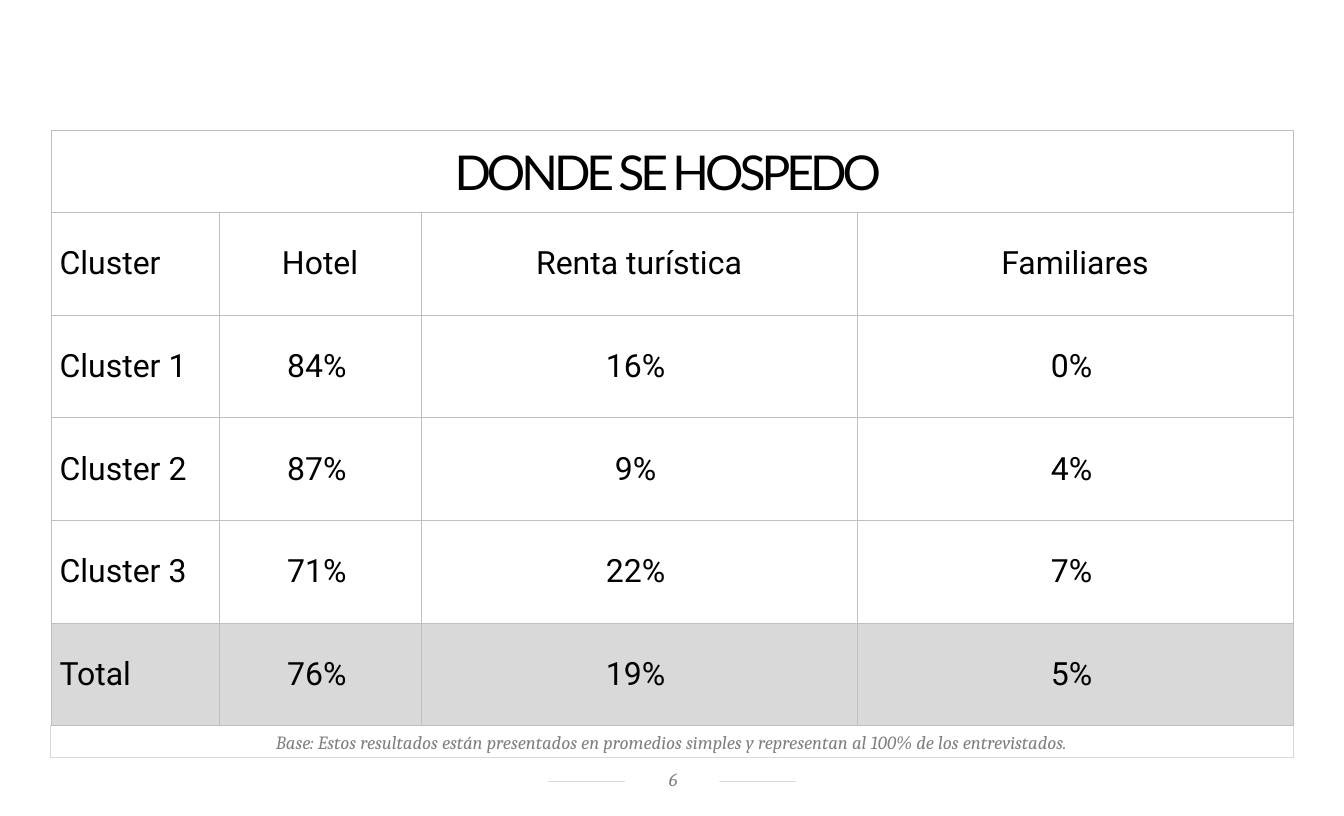
from pptx import Presentation
from pptx.dml.color import RGBColor
from pptx.enum.shapes import MSO_CONNECTOR, MSO_SHAPE
from pptx.enum.text import MSO_ANCHOR as ANCHOR, MSO_AUTO_SIZE as AUTO, PP_ALIGN as ALIGN
from pptx.oxml import parse_xml
from pptx.oxml.ns import nsdecls
from pptx.util import Pt

BORDER = "BFBFBF"
RULE = "D9D9D9"
GREY = "808080"


def rgb(color):
    return RGBColor.from_string(color)


def write(tf, text, font="Roboto", size=24, color="000000", italic=False,
          align=ALIGN.CENTER, anchor=ANCHOR.MIDDLE, spacing=0, indent=0):
    """Fill a text frame with one formatted paragraph; spacing and indent are in points."""
    tf.word_wrap = True
    tf.vertical_anchor = anchor
    p = tf.paragraphs[0]
    p.alignment = align
    if indent:
        p._p.get_or_add_pPr().set("marL", str(Pt(indent)))
    r = p.add_run()
    r.text = text
    r.font.name, r.font.size, r.font.italic = font, Pt(size), italic
    r.font.color.rgb = rgb(color)
    if spacing:
        r._r.get_or_add_rPr().set("spc", str(spacing * 100))


prs = Presentation()
prs.slide_width, prs.slide_height = Pt(1008), Pt(612)
s = prs.slides.add_slide(prs.slide_layouts[6])
s.background.fill.solid()
s.background.fill.fore_color.rgb = rgb("FFFFFF")

# Page number on a rule
rule = s.shapes.add_connector(MSO_CONNECTOR.STRAIGHT, Pt(411), Pt(586), Pt(597), Pt(586))
rule.line.color.rgb = rgb(RULE)
rule.line.width = Pt(0.5)
rule._element.spPr.append(parse_xml(f"<a:effectLst {nsdecls('a')}/>"))

number = s.shapes.add_shape(MSO_SHAPE.RECTANGLE, Pt(468.6), Pt(574.5), Pt(71), Pt(21))
number.shadow.inherit = False
number.fill.solid()
number.fill.fore_color.rgb = rgb("FFFFFF")
number.line.fill.background()
tf = number.text_frame
tf.margin_left, tf.margin_top, tf.margin_right, tf.margin_bottom = Pt(8.6), Pt(1.4), Pt(7.2), Pt(3.6)
write(tf, "6", font="Cambria", size=14, color=GREY, italic=True)

# Base note under the table
left, width = 38.2, 931.6
note = s.shapes.add_shape(MSO_SHAPE.RECTANGLE, Pt(left), Pt(544.2), Pt(width), Pt(24.2))
note.shadow.inherit = False
note.fill.solid()
note.fill.fore_color.rgb = rgb("FFFFFF")
note.line.color.rgb = rgb(RULE)
note.line.width = Pt(0.75)
note.text_frame.auto_size = AUTO.SHAPE_TO_FIT_TEXT
write(note.text_frame,
      "Base: Estos resultados están presentados en promedios simples y "
      "representan al 100% de los entrevistados.",
      font="Cambria", size=14, color=GREY, italic=True, anchor=ANCHOR.BOTTOM)

# Lodging table
rows = [
    ["DONDE SE HOSPEDO ", "", "", ""],
    ["Cluster", "Hotel", "Renta turística", "Familiares"],
    ["Cluster 1", "84%", "16%", "0%"],
    ["Cluster 2", "87%", "9%", "4%"],
    ["Cluster 3", "71%", "22%", "7%"],
    ["Total", "76%", "19%", "5%"],
]
col_widths = [126.2, 151.4, 327, 327]
row_heights = [61.2] + [77] * 5
table = s.shapes.add_table(len(rows), len(col_widths), Pt(left), Pt(98),
                           Pt(width), Pt(sum(row_heights))).table
table.first_row = table.horz_banding = False
for col, w in zip(table.columns, col_widths):
    col.width = Pt(w)
for row, h in zip(table.rows, row_heights):
    row.height = Pt(h)
table.cell(0, 0).merge(table.cell(0, 3))

for i, texts in enumerate(rows):
    for j, text in enumerate(texts):
        cell = table.cell(i, j)
        cell.margin_left = cell.margin_top = Pt(0.7)
        cell.margin_right = Pt(5.8 if i > 1 and j > 0 else 0.7)
        cell.margin_bottom = 0
        cell.vertical_anchor = ANCHOR.MIDDLE
        if texts[0] == "Total":
            cell.fill.solid()
            cell.fill.fore_color.rgb = rgb(RULE)
        else:
            cell.fill.background()
        for k, side in enumerate("LRTB"):
            cell._tc.get_or_add_tcPr().insert(k, parse_xml(
                f'<a:ln{side} {nsdecls("a")} w="{Pt(0.5)}"><a:solidFill>'
                f'<a:srgbClr val="{BORDER}"/></a:solidFill></a:ln{side}>'))
        if i == 0 and j == 0:
            write(cell.text_frame, text, font="Lato", size=36, spacing=-3)
        elif i > 0 and j == 0:
            write(cell.text_frame, text, align=ALIGN.LEFT, indent=5.8)
        elif i > 0:
            write(cell.text_frame, text)

prs.save("out.pptx")
